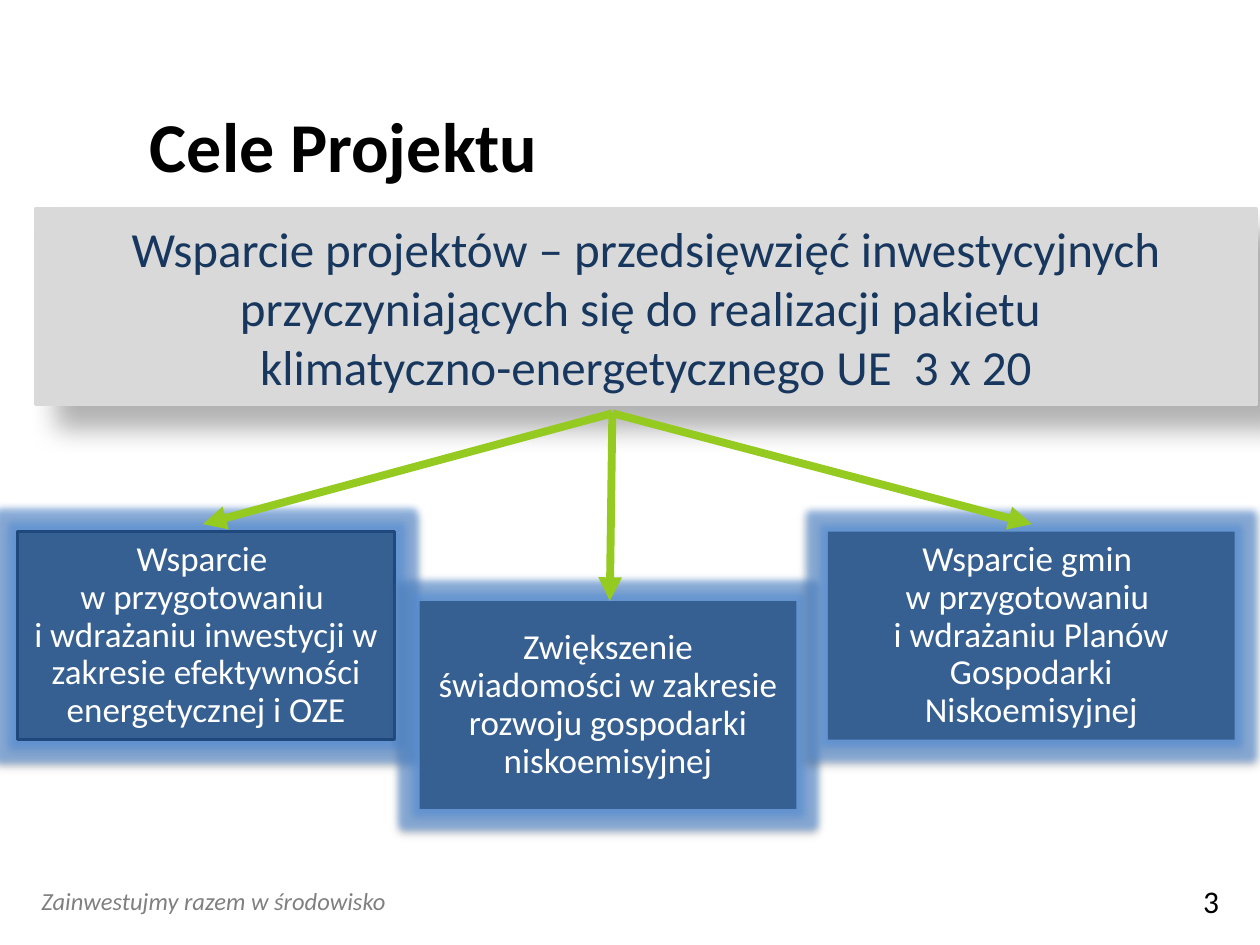
from dataclasses import dataclass

from lxml import etree
from pptx import Presentation
from pptx import util as u
from pptx.dml.color import RGBColor
from pptx.enum import shapes, text
from pptx.oxml import ns


@dataclass(frozen=True)
class Theme:
    font: str = "Calibri"
    black: str = "000000"
    white: str = "FFFFFF"
    grey: str = "808080"
    banner: str = "D9D9D9"
    banner_text: str = "17375E"
    box: str = "376092"
    box_line: str = "1F497D"
    glow: str = "558ED5"
    arrow: str = "95CA20"
    title_size: int = 40
    banner_size: int = 28
    box_size: int = 20
    number_size: int = 18
    footer_size: int = 14


class Deck:
    def __init__(self, theme):
        self.theme = theme
        self.prs = Presentation()
        self.prs.slide_width, self.prs.slide_height = u.Inches(10), u.Inches(7.5)
        self.s = self.prs.slides.add_slide(self.prs.slide_layouts[5])

    def set_text(self, sp, words, size, color, frame=None, para=None, **font):
        tf = sp.text_frame
        tf.text = words
        p = tf.paragraphs[0]
        formats = [
            (tf, {"word_wrap": True, **(frame or {})}),
            (p, para or {}),
        ]
        style = {"name": self.theme.font, "size": u.Pt(size), **font}
        formats += [(r.font, style) for r in p.runs]
        for target, values in formats:
            for name, value in values.items():
                setattr(target, name, value)
        for r in p.runs:
            r.font.color.rgb = RGBColor.from_string(color)

    def effects(self, sp, shadow, glow=None):
        """Add an outer shadow (alpha %, blur, distance, angle) and a glow (colour, radius)."""
        sp.shadow.inherit = False
        lst = sp._element.spPr.find(ns.qn("a:effectLst"))

        def effect(tag, color, alpha, **attrs):
            el = etree.SubElement(lst, ns.qn(tag), {k: str(v) for k, v in attrs.items()})
            clr = etree.SubElement(el, ns.qn("a:srgbClr"), val=color)
            etree.SubElement(clr, ns.qn("a:alpha"), val=str(alpha * 1000))

        if glow:
            color, radius = glow
            effect("a:glow", color, 60, rad=int(u.Pt(radius)))
        alpha, blur, dist, angle = shadow
        effect("a:outerShdw", self.theme.black, alpha, blurRad=int(u.Pt(blur)),
               dist=int(u.Pt(dist)), dir=angle * 60000, rotWithShape=0)

    def title(self, words, *at):
        sp = self.s.shapes.title
        sp.left, sp.top, sp.width, sp.height = map(u.Inches, at)
        self.set_text(sp, words, self.theme.title_size, self.theme.black, bold=True,
                      frame={"vertical_anchor": text.MSO_ANCHOR.MIDDLE,
                             "auto_size": text.MSO_AUTO_SIZE.NONE},
                      para={"alignment": text.PP_ALIGN.LEFT})

    def label(self, words, at, size, color, **font):
        sp = self.s.shapes.add_textbox(*map(u.Inches, at))
        self.set_text(sp, words, size, color, **font)

    def panel(self, words, at, fill, size, color, shadow, line=None, glow=None, spacing=1.0):
        sp = self.s.shapes.add_shape(shapes.MSO_SHAPE.RECTANGLE, *map(u.Inches, at))
        sp.fill.solid()
        sp.fill.fore_color.rgb = RGBColor.from_string(fill)
        if line:
            sp.line.color.rgb = RGBColor.from_string(line)
            sp.line.width = u.Pt(2)
        else:
            sp.line.fill.background()
        self.effects(sp, shadow, glow)
        self.set_text(sp, words, size, color,
                      frame={"vertical_anchor": text.MSO_ANCHOR.MIDDLE},
                      para={"alignment": text.PP_ALIGN.CENTER, "line_spacing": spacing})

    def arrow(self, start, end):
        c = self.s.shapes.add_connector(shapes.MSO_CONNECTOR.STRAIGHT,
                                        *map(u.Inches, start + end))
        c.line.color.rgb = RGBColor.from_string(self.theme.arrow)
        c.line.width = u.Pt(4.5)
        sp_pr = c._element.spPr
        etree.SubElement(sp_pr.find(ns.qn("a:ln")), ns.qn("a:tailEnd"), type="triangle")
        etree.SubElement(sp_pr, ns.qn("a:effectLst"))


def main():
    t = Theme()
    d = Deck(t)
    d.title("Cele Projektu", 1.09, 0.52, 8.33, 1.25)
    d.label("Zainwestujmy razem w środowisko", (0.23, 6.98, 4.22, 0.34),
            t.footer_size, t.grey, italic=True)
    d.label("3", (9.45, 6.95, 0.55, 0.4), t.number_size, t.black)

    goals = [
        ("Wsparcie \vw przygotowaniu \vi wdrażaniu inwestycji w zakresie "
         "efektywności energetycznej i OZE", 0.14, 4.22, 2.99, t.box_line),
        ("Zwiększenie świadomości w zakresie rozwoju gospodarki niskoemisyjnej",
         3.33, 4.77, 2.99, None),
        ("Wsparcie gmin \vw przygotowaniu \vi wdrażaniu Planów Gospodarki "
         "Niskoemisyjnej", 6.57, 4.22, 3.23, None),
    ]
    for words, left, top, width, line in goals:
        d.panel(words, (left, top, width, 1.65), t.box, t.box_size, t.white,
                shadow=(32, 3.5, 2.2, 90), line=line, glow=(t.glow, 8), spacing=0.9)

    d.panel("Wsparcie projektów – przedsięwzięć inwestycyjnych przyczyniających się "
            "do realizacji pakietu \vklimatyczno-energetycznego UE  3 x 20",
            (0.28, 1.66, 9.69, 1.55), t.banner, t.banner_size, t.banner_text,
            shadow=(30, 15, 18, 45), line=t.banner)

    for end in ((1.61, 4.16), (4.84, 4.77), (8.19, 4.16)):
        d.arrow((4.86, 3.28), end)

    d.prs.save("out.pptx")


if __name__ == "__main__":
    main()
